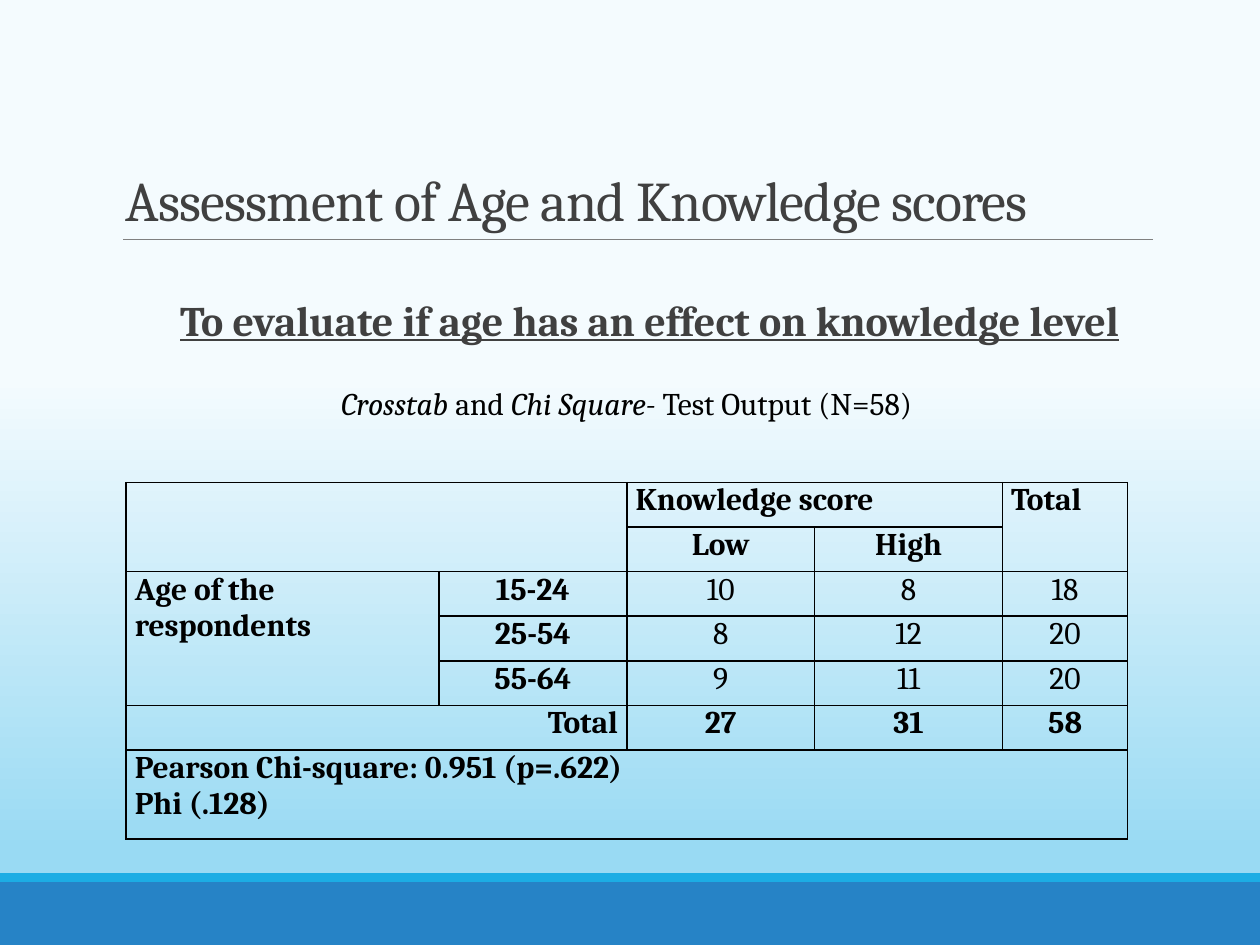
from dataclasses import dataclass

from lxml import etree
from pptx import Presentation
from pptx.dml.color import RGBColor
from pptx.enum import shapes, text
from pptx.oxml.ns import qn
from pptx.util import Inches, Pt

ALIGN = text.PP_ALIGN


@dataclass(frozen=True)
class Theme:
    font: str = "Cambria"
    heading: str = "404040"
    ink: str = "000000"
    rule: str = "808080"
    band: str = "2683C6"
    stripe: str = "1CADE4"
    sky_top: str = "F4FBFE"
    sky_bottom: str = "99DAF3"
    title_size: int = 32
    subtitle_size: int = 24
    text_size: int = 18


THEME = Theme()


def rgb(value):
    return RGBColor.from_string(value)


def write(frame, paragraphs, size=THEME.text_size, color=THEME.ink, bold=False,
          underline=False, align=ALIGN.LEFT, line_spacing=None, before=0,
          after=0, tracking=0):
    for index, pieces in enumerate(paragraphs):
        paragraph = frame.paragraphs[0] if index == 0 else frame.add_paragraph()
        paragraph.alignment = align
        paragraph.line_spacing = line_spacing
        paragraph.space_before, paragraph.space_after = Pt(before), Pt(after)
        for words, italic in pieces:
            run = paragraph.add_run()
            run.text = words
            font = run.font
            font.name, font.size, font.color.rgb = THEME.font, Pt(size), rgb(color)
            font.bold, font.italic, font.underline = bold, italic, underline
            if tracking:
                run._r.get_or_add_rPr().set("spc", str(tracking))


def add_text(slide, box, pieces, anchor=text.MSO_ANCHOR.TOP, margins=(0.1, 0.1), **style):
    frame = slide.shapes.add_textbox(*map(Inches, box)).text_frame
    frame.word_wrap = True
    frame.vertical_anchor = anchor
    frame.margin_left, frame.margin_right = map(Inches, margins)
    write(frame, [pieces], **style)


def add_backdrop(slide):
    fill = slide.background.fill
    fill.gradient()
    fill.gradient_angle = 270
    stops = ((0.4, THEME.sky_top), (0.9, THEME.sky_bottom))
    for stop, (position, color) in zip(fill.gradient_stops, stops):
        stop.position, stop.color.rgb = position, rgb(color)


def add_footer(slide, left, top, width, height):
    stripe_height = 0.07
    bands = ((top + stripe_height, height - stripe_height, THEME.band),
             (top, stripe_height, THEME.stripe))
    for band_top, band_height, color in bands:
        band = slide.shapes.add_shape(
            shapes.MSO_SHAPE.RECTANGLE,
            *map(Inches, (left, band_top, width, band_height)))
        band.shadow.inherit = False
        band.fill.solid()
        band.fill.fore_color.rgb = rgb(color)
        band.line.fill.background()


def add_header(slide, left, top, width, height):
    right, bottom = left + width, top + height
    rule = slide.shapes.add_connector(
        shapes.MSO_CONNECTOR.STRAIGHT,
        *map(Inches, (left + 0.08, bottom, right, bottom)))
    rule.line.color.rgb = rgb(THEME.rule)
    rule.line.width = Pt(0.5)
    etree.SubElement(rule._element.spPr, qn("a:effectLst"))
    add_text(slide, (left, top, width, height),
             [("Assessment of Age and Knowledge scores", False)],
             anchor=text.MSO_ANCHOR.BOTTOM, size=THEME.title_size,
             color=THEME.heading, line_spacing=0.85, tracking=-50)


def add_intro(slide, left, top, width):
    add_text(slide, (left, top, width, 0.63),
             [("To evaluate if age has an effect on knowledge level", False)],
             margins=(0.1, 0), size=THEME.subtitle_size, color=THEME.heading,
             bold=True, underline=True, align=ALIGN.CENTER, line_spacing=0.9,
             before=12, after=2)
    add_text(slide, (left + 1.63, top + 0.67, 4.99, 0.4),
             [("Crosstab", True), (" and ", False), ("Chi Square- ", True),
              ("Test Output (N=58)", False)])


def border_cell(cell):
    properties = cell._tc.get_or_add_tcPr()
    for position, side in enumerate(("lnL", "lnR", "lnT", "lnB")):
        line = etree.Element(qn(f"a:{side}"), w=str(Pt(1)))
        fill = etree.SubElement(line, qn("a:solidFill"))
        etree.SubElement(fill, qn("a:srgbClr"), val=THEME.ink)
        properties.insert(position, line)


def add_crosstab(slide, left, top, width, height):
    rows = (
        ("", "", "Knowledge score", "", "Total"),
        ("", "", "Low", "High", ""),
        ("Age of the respondents", "15-24", "10", "8", "18"),
        ("", "25-54", "8", "12", "20"),
        ("", "55-64", "9", "11", "20"),
        ("Total", "", "27", "31", "58"),
        ("Pearson Chi-square: 0.951 (p=.622)\nPhi (.128)", "", "", "", ""),
    )
    merges = (((0, 0), (1, 1)), ((0, 2), (0, 3)), ((0, 4), (1, 4)),
              ((2, 0), (4, 0)), ((5, 0), (5, 1)), ((6, 0), (6, 4)))
    aligns = {(0, 2): ALIGN.JUSTIFY, (0, 4): ALIGN.JUSTIFY, (2, 0): ALIGN.LEFT,
              (5, 0): ALIGN.RIGHT, (6, 0): ALIGN.JUSTIFY}
    column_shares = (2.5, 1.5, 1.5, 1.5, 1)
    row_shares = (1,) * 6 + (2,)

    table = slide.shapes.add_table(
        len(rows), len(column_shares), *map(Inches, (left, top, width, height))).table
    table.first_row = table.horz_banding = False
    for column, share in zip(table.columns, column_shares):
        column.width = Inches(width * share / sum(column_shares))
    for row, share in zip(table.rows, row_shares):
        row.height = Inches(height * share / sum(row_shares))
    for first, last in merges:
        table.cell(*first).merge(table.cell(*last))

    for r, values in enumerate(rows):
        for c, value in enumerate(values):
            cell = table.cell(r, c)
            cell.fill.background()
            border_cell(cell)
            cell.margin_left = cell.margin_right = Inches(0.07)
            cell.margin_top = cell.margin_bottom = 0
            is_count = 2 <= r <= 4 and c >= 2
            if value:
                write(cell.text_frame,
                      [[(line, False)] for line in value.split("\n")],
                      bold=not is_count, align=aligns.get((r, c), ALIGN.CENTER))


def main():
    deck = Presentation()
    deck.slide_width, deck.slide_height = Inches(10), Inches(7.5)
    slide = deck.slides.add_slide(deck.slide_layouts[6])
    add_backdrop(slide)
    add_footer(slide, 0, 6.93, 10, 0.57)
    add_header(slide, 0.9, 0.31, 8.25, 1.59)
    add_intro(slide, 0.98, 2.33, 8.25)
    add_crosstab(slide, 1, 3.83, 7.95, 2.83)
    deck.save("out.pptx")


if __name__ == "__main__":
    main()
